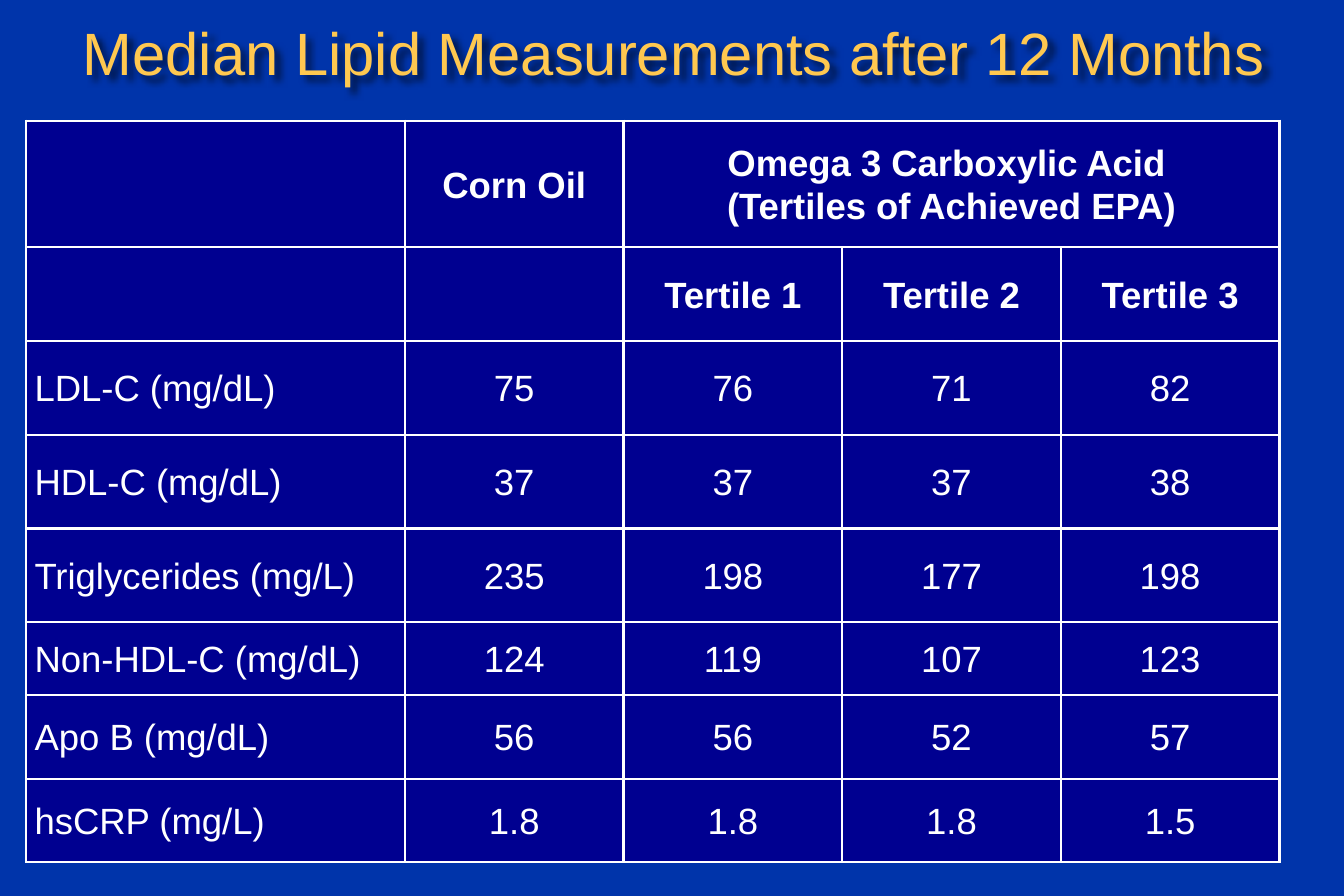
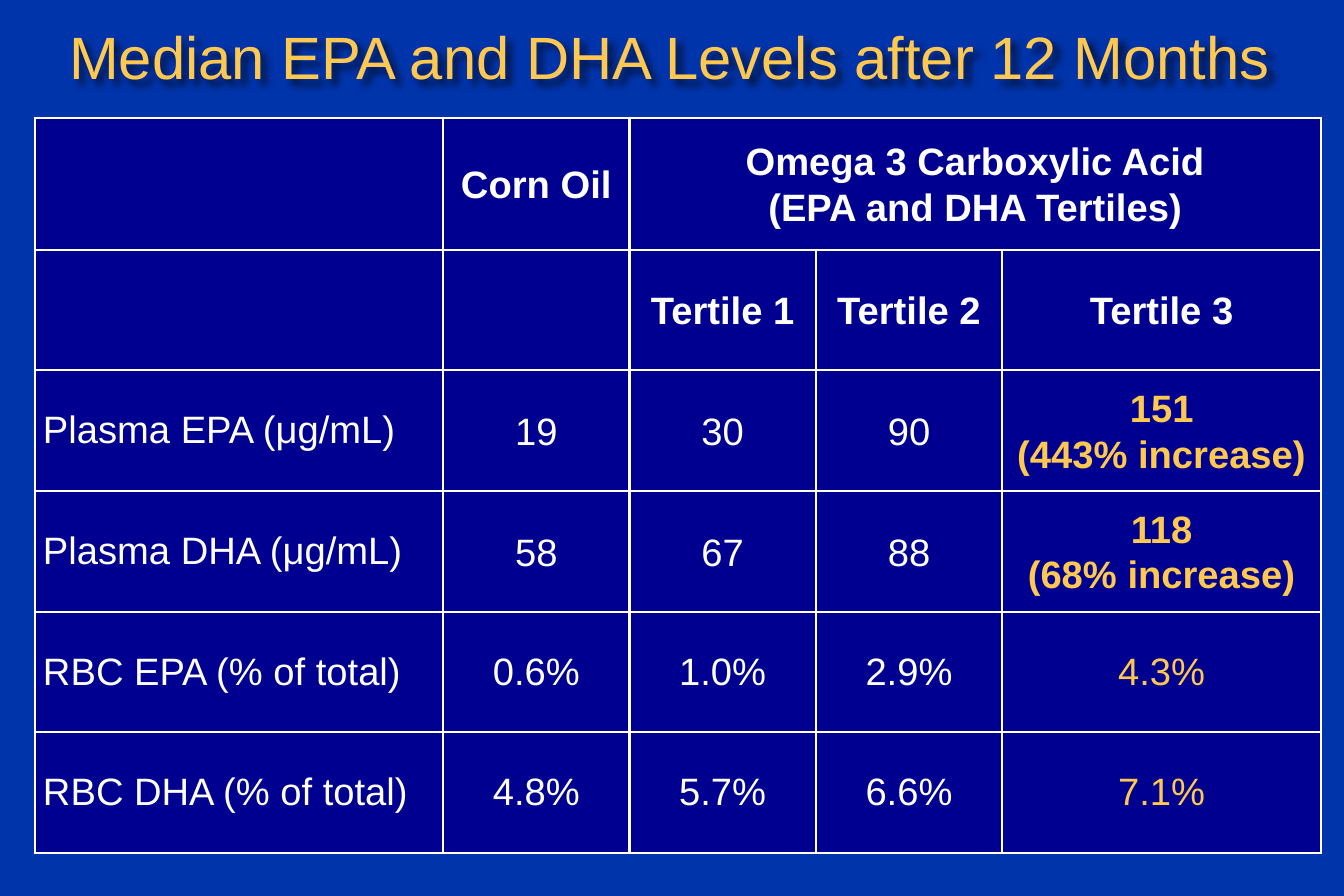
from dataclasses import dataclass

from lxml.etree import SubElement
from pptx import Presentation
from pptx.dml.color import RGBColor as Rgb
from pptx.enum.text import MSO_ANCHOR as Anchor, PP_ALIGN as Align
from pptx.oxml.ns import qn
from pptx.util import Inches, Pt

COLOURS = {
    "background": "0034AA",
    "cell": "000090",
    "text": "FFFFFF",
    "title": "FFC850",
    "highlight": "FFC84F",
    "shadow": "000000",
}
CELL_FORMAT = {
    "margin_left": Inches(0.07),
    "margin_right": Inches(0.07),
    "margin_top": 0,
    "margin_bottom": 0,
    "vertical_anchor": Anchor.MIDDLE,
}
TITLE_FORMAT = {"word_wrap": True, "vertical_anchor": Anchor.MIDDLE}
TITLE_SHADOW = {"blurRad": Pt(4), "dist": Pt(4), "dir": 2700000, "algn": "tl", "rotWithShape": 0}
BORDER_SIDES = ("a:lnL", "a:lnR", "a:lnT", "a:lnB")
TERTILES = ("Tertile 1", "Tertile 2", "Tertile 3")
LOOSE = 1.07
SINGLE = 1.0


@dataclass(frozen=True)
class Measure:
    label: str
    values: tuple[str, ...]
    spacing: float = LOOSE


@dataclass(frozen=True)
class ResultSlide:
    title: str
    title_box: tuple[float, float, float, float]
    origin: tuple[float, float]
    column_widths: tuple[float, ...]
    row_heights: tuple[float, ...]
    size: int
    treatment: str
    measures: tuple[Measure, ...]
    label_spacing: float = LOOSE
    highlight_last: bool = False


RESULTS = (
    ResultSlide(
        title="Median Lipid Measurements after 12 Months",
        title_box=(0.07, 0, 11.14, 0.87),
        origin=(0.22, 1.01),
        column_widths=(3.17,) + (1.83,) * 4,
        row_heights=(1.06,) + (0.785,) * 4 + (0.61, 0.7, 0.7),
        size=22,
        treatment="Omega 3 Carboxylic Acid \n(Tertiles of Achieved EPA)",
        measures=(
            Measure("LDL-C (mg/dL)", ("75", "76", "71", "82")),
            Measure("HDL-C (mg/dL)", ("37", "37", "37", "38")),
            Measure("Triglycerides (mg/L)", ("235", "198", "177", "198")),
            Measure("Non-HDL-C (mg/dL)", ("124", "119", "107", "123")),
            Measure("Apo B (mg/dL)", ("56", "56", "52", "57")),
            Measure("hsCRP (mg/L)", ("1.8", "1.8", "1.8", "1.5")),
        ),
    ),
    ResultSlide(
        title="Median EPA and DHA Levels after 12 Months",
        title_box=(0, 0.03, 11.21, 0.87),
        origin=(0.29, 0.99),
        column_widths=(3.42,) + (1.56,) * 3 + (2.67,),
        row_heights=(1.1,) + (1.01,) * 5,
        size=23,
        treatment="Omega 3 Carboxylic Acid\n(EPA and DHA Tertiles)",
        measures=(
            Measure("Plasma EPA (μg/mL)", ("19", "30", "90", "151\n(443% increase)")),
            Measure("Plasma DHA (μg/mL)", ("58", "67", "88", "118\n(68% increase)")),
            Measure("RBC EPA (% of total)", ("0.6%", "1.0%", "2.9%", "4.3%"), SINGLE),
            Measure("RBC DHA (% of total)", ("4.8%", "5.7%", "6.6%", "7.1%"), SINGLE),
        ),
        label_spacing=SINGLE,
        highlight_last=True,
    ),
)


def apply(target, formats: dict) -> None:
    for attribute, value in formats.items():
        setattr(target, attribute, value)


def write(frame, text: str, size: int, colour: str, bold: bool = False,
          align: Align = Align.CENTER, spacing: float = SINGLE) -> None:
    frame.text = text
    for paragraph in frame.paragraphs:
        apply(paragraph, {"alignment": align, "line_spacing": spacing})
        for run in paragraph.runs:
            apply(run.font, {"name": "Arial", "size": Pt(size), "bold": bold})
            run.font.color.rgb = Rgb.from_string(COLOURS[colour])


def add_colour(parent, colour: str):
    return SubElement(parent, qn("a:srgbClr"), val=COLOURS[colour])


def style_cell(cell) -> None:
    apply(cell, CELL_FORMAT)
    properties = cell._tc.get_or_add_tcPr()
    for side in BORDER_SIDES:
        border = SubElement(properties, qn(side), w=str(Pt(1.5)))
        add_colour(SubElement(border, qn("a:solidFill")), "text")
    cell.fill.solid()
    cell.fill.fore_color.rgb = Rgb.from_string(COLOURS["cell"])


def add_results(slide, result: ResultSlide) -> None:
    widths, heights = result.column_widths, result.row_heights
    extent = (*result.origin, sum(widths), sum(heights))
    table = slide.shapes.add_table(len(heights), len(widths), *map(Inches, extent)).table
    apply(table, {"first_row": False, "horz_banding": False})
    for column, width in zip(table.columns, widths):
        column.width = Inches(width)
    for row, height in zip(table.rows, heights):
        row.height = Inches(height)
    for cell in table.iter_cells():
        style_cell(cell)
    table.cell(0, 2).merge(table.cell(0, 4))

    headings = {(0, 1): "Corn Oil", (0, 2): result.treatment}
    headings |= {(1, column): name for column, name in enumerate(TERTILES, 2)}
    for position, heading in headings.items():
        write(table.cell(*position).text_frame, heading, result.size, "text", True, spacing=LOOSE)

    for row, measure in enumerate(result.measures, 2):
        write(table.cell(row, 0).text_frame, measure.label, result.size, "text",
              align=Align.LEFT, spacing=result.label_spacing)
        for column, value in enumerate(measure.values, 1):
            highlighted = result.highlight_last and column == len(measure.values)
            write(table.cell(row, column).text_frame, value, result.size,
                  "highlight" if highlighted else "text", "\n" in value,
                  spacing=measure.spacing)


def add_title(slide, result: ResultSlide) -> None:
    title = slide.shapes.add_textbox(*map(Inches, result.title_box))
    apply(title.text_frame, TITLE_FORMAT)
    write(title.text_frame, result.title, 36, "title")
    title.shadow.inherit = False
    effects = title._element.spPr.find(qn("a:effectLst"))
    shadow = SubElement(effects, qn("a:outerShdw"),
                        {key: str(value) for key, value in TITLE_SHADOW.items()})
    SubElement(add_colour(shadow, "shadow"), qn("a:alpha"), val="60000")


def main() -> None:
    deck = Presentation()
    apply(deck, {"slide_width": Inches(11.25), "slide_height": Inches(7.5)})
    for result in RESULTS:
        slide = deck.slides.add_slide(deck.slide_layouts[6])
        slide.background.fill.solid()
        slide.background.fill.fore_color.rgb = Rgb.from_string(COLOURS["background"])
        add_results(slide, result)
        add_title(slide, result)
    deck.save("out.pptx")


if __name__ == "__main__":
    main()
